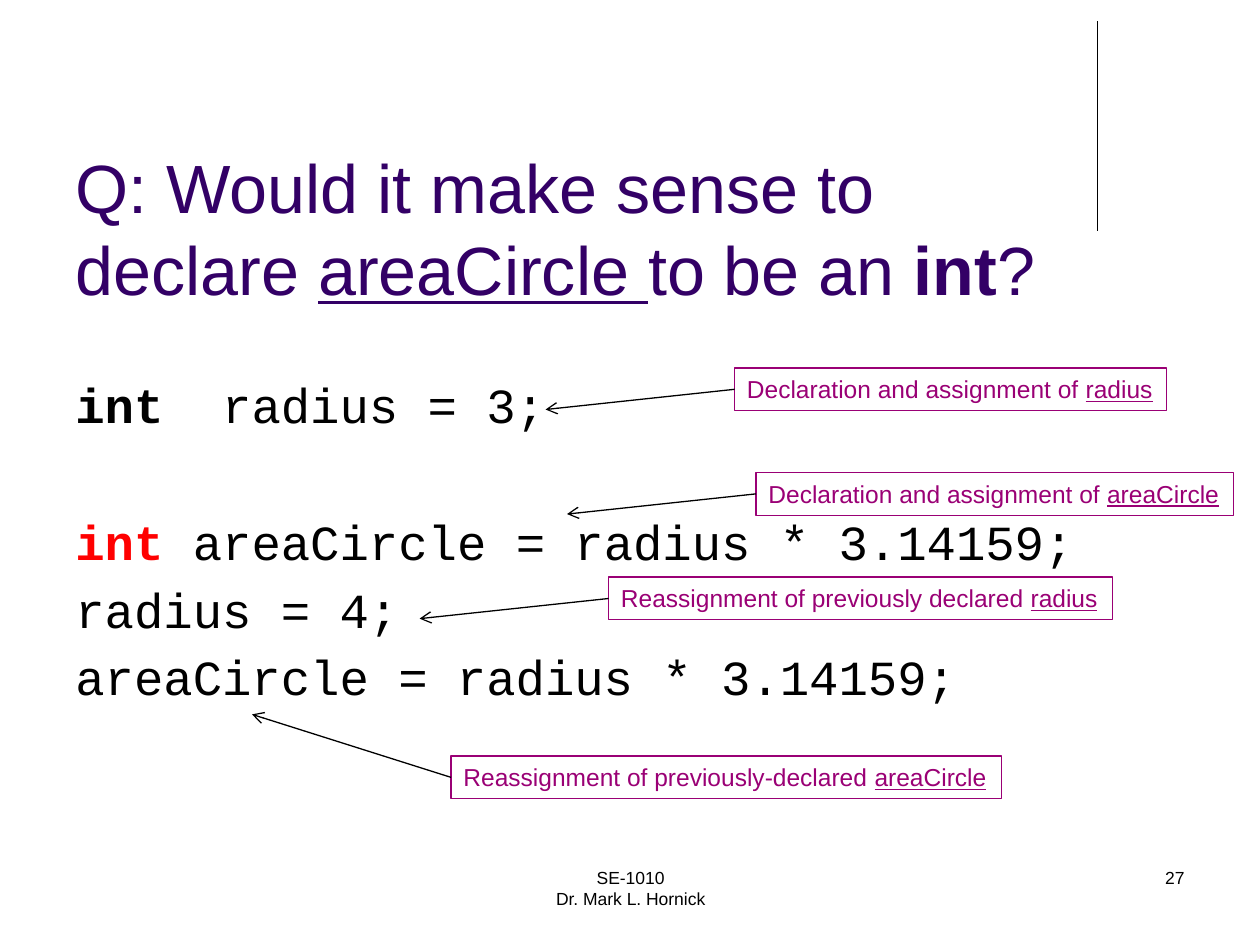
from lxml import etree
from pptx import Presentation
from pptx.dml.color import RGBColor
from pptx.enum.shapes import MSO_CONNECTOR, MSO_SHAPE
from pptx.enum.text import MSO_ANCHOR, MSO_AUTO_SIZE, PP_ALIGN
from pptx.oxml.ns import qn
from pptx.util import Inches, Pt

BLACK = RGBColor(0x00, 0x00, 0x00)
RED = RGBColor(0xFF, 0x00, 0x00)
INDIGO = RGBColor(0x33, 0x00, 0x66)
PURPLE = RGBColor(0x9A, 0x00, 0x75)
STRAIGHT = MSO_CONNECTOR.STRAIGHT
RECTANGLE = MSO_SHAPE.RECTANGLE
TOP, BOTTOM = MSO_ANCHOR.TOP, MSO_ANCHOR.BOTTOM
LEFT, CENTER, RIGHT = PP_ALIGN.LEFT, PP_ALIGN.CENTER, PP_ALIGN.RIGHT
GROW = MSO_AUTO_SIZE.SHAPE_TO_FIT_TEXT
LEFT_SIDE = 1

CODE_LINES = [
    ("int", "  radius = 3;", BLACK, 0),
    ("int ", "areaCircle = radius * 3.14159;", RED, 45),
    ("", "radius = 4;", BLACK, 5),
    ("", "areaCircle = radius * 3.14159;", BLACK, 5),
]
CALLOUTS = [
    ("Declaration and assignment of ", "radius", 5.83, 2.92, 3.43, 4.33, 3.25),
    ("Declaration and assignment of ", "areaCircle", 6, 3.75, 3.79, 4.5, 4.08),
    ("Reassignment of previously declared ", "radius", 4.83, 4.58, 4, 3.33, 4.91),
    ("Reassignment of previously-declared ", "areaCircle", 3.58, 6, 4.37, 2, 5.67),
]


class SlideBuilder:
    sans = "Arial"
    mono = "Courier New"
    line_width = Pt(0.75)
    callout_height = 0.34

    def __init__(self, slide):
        self.slide = slide

    def text_box(self, left, top, width, height, anchor=TOP):
        shape = self.slide.shapes.add_textbox(
            Inches(left), Inches(top), Inches(width), Inches(height))
        text_frame = shape.text_frame
        text_frame.word_wrap = True
        text_frame.vertical_anchor = anchor
        return text_frame

    def add_run(self, paragraph, text, name, size, color, bold=False, underline=False):
        run = paragraph.add_run()
        run.text = text
        font = run.font
        font.name, font.size = name, Pt(size)
        font.bold, font.underline = bold, underline
        font.color.rgb = color

    def title(self, parts):
        text_frame = self.text_box(0.5, 0.33, 8.25, 2.17, BOTTOM)
        for text, bold, underline in parts:
            self.add_run(text_frame.paragraphs[0], text, self.sans, 39, INDIGO,
                         bold, underline)

    def code(self, lines):
        text_frame = self.text_box(0.5, 2.92, 9.08, 4.17)
        for index, (keyword, rest, color, gap) in enumerate(lines):
            paragraph = text_frame.add_paragraph() if index else text_frame.paragraphs[0]
            paragraph.space_before = Pt(gap)
            if keyword:
                self.add_run(paragraph, keyword, self.mono, 28, color, bold=True)
            self.add_run(paragraph, rest, self.mono, 28, BLACK)

    def footer(self, text, left, width, alignment):
        paragraph = self.text_box(left, 6.83, width, 0.5).paragraphs[0]
        paragraph.text = text
        paragraph.alignment = alignment
        for run in paragraph.runs:
            run.font.name, run.font.size = self.sans, Pt(10)
            run.font.color.rgb = BLACK

    def line(self, start_x, start_y, end_x, end_y):
        connector = self.slide.shapes.add_connector(
            STRAIGHT, Inches(start_x), Inches(start_y), Inches(end_x), Inches(end_y))
        connector.line.color.rgb = BLACK
        connector.line.width = self.line_width
        etree.SubElement(connector._element.spPr, qn("a:effectLst"))
        return connector

    def callout(self, text, variable, left, top, width, tip_x, tip_y):
        shape = self.slide.shapes.add_shape(
            RECTANGLE, Inches(left), Inches(top), Inches(width),
            Inches(self.callout_height))
        shape.shadow.inherit = False
        shape.fill.background()
        shape.line.color.rgb = PURPLE
        shape.line.width = self.line_width
        text_frame = shape.text_frame
        text_frame.word_wrap = False
        text_frame.auto_size = GROW
        text_frame.vertical_anchor = TOP
        paragraph = text_frame.paragraphs[0]
        paragraph.alignment = LEFT
        self.add_run(paragraph, text, self.sans, 14, PURPLE)
        self.add_run(paragraph, variable, self.sans, 14, PURPLE, underline=True)
        arrow = self.line(left, top + self.callout_height / 2, tip_x, tip_y)
        arrow.begin_connect(shape, LEFT_SIDE)
        etree.SubElement(arrow.line._get_or_add_ln(), qn("a:tailEnd"), type="arrow")


def main():
    presentation = Presentation()
    presentation.slide_width = Inches(10)
    presentation.slide_height = Inches(7.5)
    slide = presentation.slides.add_slide(presentation.slide_layouts[6])
    builder = SlideBuilder(slide)
    builder.line(8.71, 0.17, 8.71, 1.83)
    builder.title([
        ("Q: Would it make sense to declare ", False, False),
        ("areaCircle ", False, True),
        ("to be an ", False, False),
        ("int", True, False),
        ("?", False, False),
    ])
    builder.code(CODE_LINES)
    builder.footer("SE-1010\vDr. Mark L. Hornick", 3.42, 3.17, CENTER)
    builder.footer("27", 7.17, 2.33, RIGHT)
    for callout in CALLOUTS:
        builder.callout(*callout)
    presentation.save("out.pptx")


if __name__ == "__main__":
    main()
